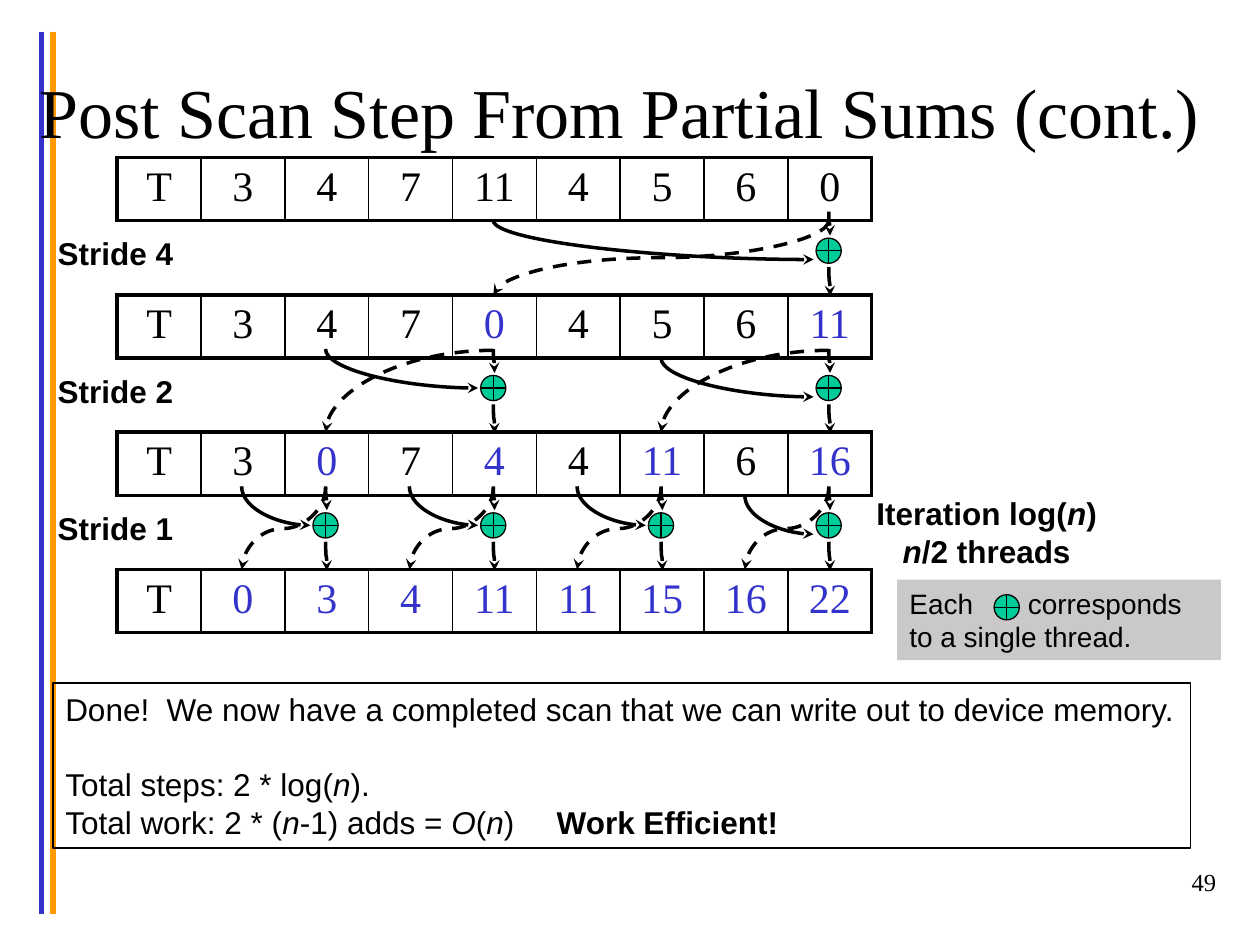
import pptx
import pptx.util
import pptx.dml.color
import pptx.enum.dml
import pptx.enum.shapes
import pptx.enum.text
import pptx.oxml
import pptx.oxml.ns
import lxml.etree

Inches, Pt = pptx.util.Inches, pptx.util.Pt
qn = pptx.oxml.ns.qn
SHAPE = pptx.enum.shapes.MSO_SHAPE
CONNECTOR = pptx.enum.shapes.MSO_CONNECTOR
ALIGN = pptx.enum.text.PP_ALIGN
COLORS = {name: pptx.dml.color.RGBColor.from_string(value) for name, value in {
    "black": "000000", "blue": "3333CC", "orange": "FF9900",
    "green": "00CC99", "gray": "808080"}.items()}


def write(frame, lines, size, font="Arial", color="black", bold=False, align=ALIGN.LEFT, wrap=False):
    """Fill a frame, one paragraph a line; every second piece between bars is italic."""
    frame.word_wrap = wrap
    frame.text = "\n".join(line.replace("|", "") for line in lines)
    for paragraph, line in zip(frame.paragraphs, lines):
        paragraph.alignment = align
        paragraph.text = ""
        for index, piece in enumerate(line.split("|")):
            if piece:
                run = paragraph.add_run()
                run.text = piece
                run.font.size, run.font.name = Pt(size), font
                run.font.bold, run.font.italic = bold, index % 2 == 1
                run.font.color.rgb = COLORS[color]


def connect(begin, end, preset="line", rotation=0, flip=None, color="black", width=2):
    """Draw a line; curved presets are turned so that they leave in the wanted direction."""
    connector = slide.shapes.add_connector(
        CONNECTOR.STRAIGHT, *(Inches(value) for value in (*begin, *end)))
    connector.line.color.rgb, connector.line.width = COLORS[color], Pt(width)
    properties = connector.element.spPr
    lxml.etree.SubElement(properties, qn("a:effectLst"))
    if preset != "line":
        properties.find(qn("a:prstGeom")).set("prst", preset)
        lxml.etree.SubElement(connector.line._get_or_add_ln(), qn("a:tailEnd"), type="stealth")
        frame = properties.find(qn("a:xfrm"))
        for name in ("flipH", "flipV"):
            frame.attrib.pop(name, None)
        frame.set("rot", str(rotation * 60000))
        if flip:
            frame.set(flip, "1")
        across, down = abs(end[0] - begin[0]), abs(end[1] - begin[1])
        if rotation in (90, 270):
            across, down = down, across
        connector.left = Inches((begin[0] + end[0] - across) / 2)
        connector.top = Inches((begin[1] + end[1] - down) / 2)
        connector.width, connector.height = Inches(across), Inches(down)
    return connector


presentation = pptx.Presentation()
presentation.slide_width, presentation.slide_height = Inches(10), Inches(7.5)
slide = presentation.slides.add_slide(presentation.slide_layouts[5])

# Side bars, title and slide number
for x, color in ((0.33, "blue"), (0.42, "orange")):
    connect((x, 0.25), (x, 7.25), color=color, width=3)

title = slide.shapes.title
title.left, title.top, title.width, title.height = 0, Inches(0.25), Inches(9.83), Inches(1.25)
write(title.text_frame, ["Post Scan Step From Partial Sums (cont.)"], 40,
      "Times New Roman", align=ALIGN.CENTER, wrap=True)
title.text_frame.auto_size = pptx.enum.text.MSO_AUTO_SIZE.NONE
title.text_frame.vertical_anchor = pptx.enum.text.MSO_ANCHOR.MIDDLE
title.element.getparent().append(title.element)

number = slide.shapes.add_textbox(Inches(7.67), Inches(6.83), Inches(2.08), Inches(0.5))
write(number.text_frame, ["49"], 14, "Times New Roman", align=ALIGN.RIGHT, wrap=True)

# Arrays after each step; the set holds the columns that the step changed
ARRAYS = [
    ("T 3 4 7 11 4 5 6 0", set()),
    ("T 3 4 7 0 4 5 6 11", {4, 8}),
    ("T 3 0 7 4 4 11 6 16", {2, 4, 6, 8}),
    ("T 0 3 4 11 11 15 16 22", set(range(1, 9))),
]
LEFT, TOP, COLUMN, ROW, PITCH = 0.93, 1.25, 5.99 / 9, 0.42, 1.09

for step, (values, changed) in enumerate(ARRAYS):
    values = values.split()
    table = slide.shapes.add_table(
        1, len(values), Inches(LEFT), Inches(TOP + step * PITCH),
        Inches(COLUMN * len(values)), Inches(ROW)).table
    table.first_row = table.horz_banding = False
    for column, value in enumerate(values):
        cell = table.cell(0, column)
        write(cell.text_frame, [value], 24, "Times New Roman",
              "blue" if column in changed else "black", align=ALIGN.CENTER, wrap=True)
        outer = {"lnT", "lnB"} | ({"lnL"} if column == 0 else set())
        outer |= {"lnR"} if column == len(values) - 1 else set()
        for side in ("lnL", "lnR", "lnT", "lnB"):
            border = lxml.etree.SubElement(
                cell._tc.get_or_add_tcPr(), qn("a:" + side),
                w=str(Pt(2.25 if side in outer else 1)))
            fill = lxml.etree.SubElement(border, qn("a:solidFill"))
            lxml.etree.SubElement(fill, qn("a:srgbClr"), val=str(COLORS["black"]))
        cell.fill.background()

# Adders with their arrows, and the circle of the legend
ADDER = 0.2
adders = []
for step, stride in enumerate((4, 2, 1)):
    top = TOP + step * PITCH
    for target in range(8, 0, -2 * stride):
        x = LEFT + (target + 0.5) * COLUMN - 0.01
        source = x - stride * COLUMN
        start = top + (0.5 if target == 8 else 0.43)
        connect((source, start), (x - 0.12, start + 0.31), "curvedConnector2", 270, "flipH")
        for begin, end in ((0.43, 0.62), (0.87, 1.1)):
            connect((x, top + begin), (x + 0.01, top + end), "curvedConnector3", 270, "flipH")
        adders.append(slide.shapes.add_shape(
            SHAPE.FLOWCHART_OR, Inches(x - ADDER / 2), Inches(top + 0.64),
            Inches(ADDER), Inches(ADDER)))
        turn = ("curvedConnector2", 180, "flipV") if stride == 2 else ("curvedConnector3", 90)
        swap = connect((x, top + (0.5 if stride == 4 else 0.44)), (source, top + PITCH), *turn)
        swap.line.dash_style = pptx.enum.dml.MSO_LINE.DASH

    label = slide.shapes.add_textbox(Inches(0.36), Inches(top + 0.56), Inches(1.12), Inches(0.4))
    write(label.text_frame, [f"Stride {stride}"], 18, bold=True)

# Closing remarks
remarks = slide.shapes.add_shape(
    SHAPE.RECTANGLE, Inches(0.42), Inches(5.42), Inches(9.03), Inches(1.31))
remarks.shadow.inherit = False
remarks.fill.background()
remarks.line.color.rgb, remarks.line.width = COLORS["black"], Pt(0.75)
write(remarks.text_frame, [
    "Done!  We now have a completed scan that we can write out to device memory.",
    "Total steps: 2 * log(|n|).",
    "Total work: 2 * (|n|-1) adds = |O|(|n|)\t||Work Efficient!"], 18)
remark_lines = remarks.text_frame.paragraphs
remark_lines[1].space_before = Pt(21)
remark_lines[2].runs[-1].font.bold = True

iteration = slide.shapes.add_textbox(Inches(6.82), Inches(3.87), Inches(2.02), Inches(0.7))
write(iteration.text_frame, ["Iteration log(|n|)", "|n|/2 threads"], 18,
      bold=True, align=ALIGN.CENTER)

# Legend
legend = slide.shapes.add_group_shape()
note = legend.shapes.add_shape(
    SHAPE.RECTANGLE, Inches(7.12), Inches(4.6), Inches(2.57), Inches(0.64))
note.shadow.inherit = False
note.fill.solid()
note.fill.fore_color.rgb = COLORS["gray"]
gray = note.element.spPr.find(qn("a:solidFill")).find(qn("a:srgbClr"))
lxml.etree.SubElement(gray, qn("a:alpha"), val="42000")
note.line.fill.background()
write(note.text_frame, ["Each\tcorresponds to a single thread."], 16, wrap=True)
adders.append(legend.shapes.add_shape(
    SHAPE.FLOWCHART_OR, Inches(7.89), Inches(4.72), Inches(ADDER), Inches(ADDER)))

for adder in adders:
    adder.shadow.inherit = False
    adder.fill.solid()
    adder.fill.fore_color.rgb = COLORS["green"]
    adder.line.color.rgb, adder.line.width = COLORS["black"], Pt(0.75)

for paragraph, stop in ((remark_lines[2], 3.9), (note.text_frame.paragraphs[0], 0.94)):
    tabs = lxml.etree.SubElement(paragraph._p.get_or_add_pPr(), qn("a:tabLst"))
    lxml.etree.SubElement(tabs, qn("a:tab"), pos=str(Inches(stop)), algn="l")

presentation.save("out.pptx")
